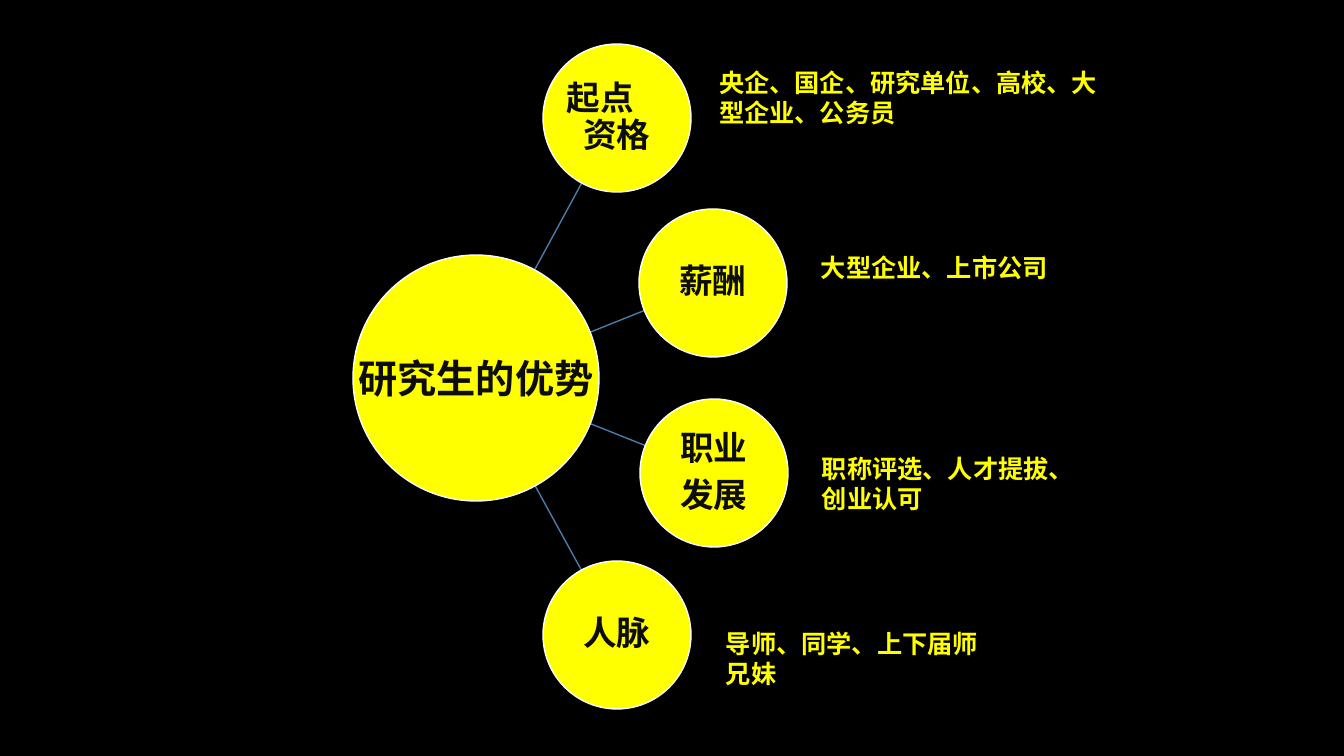
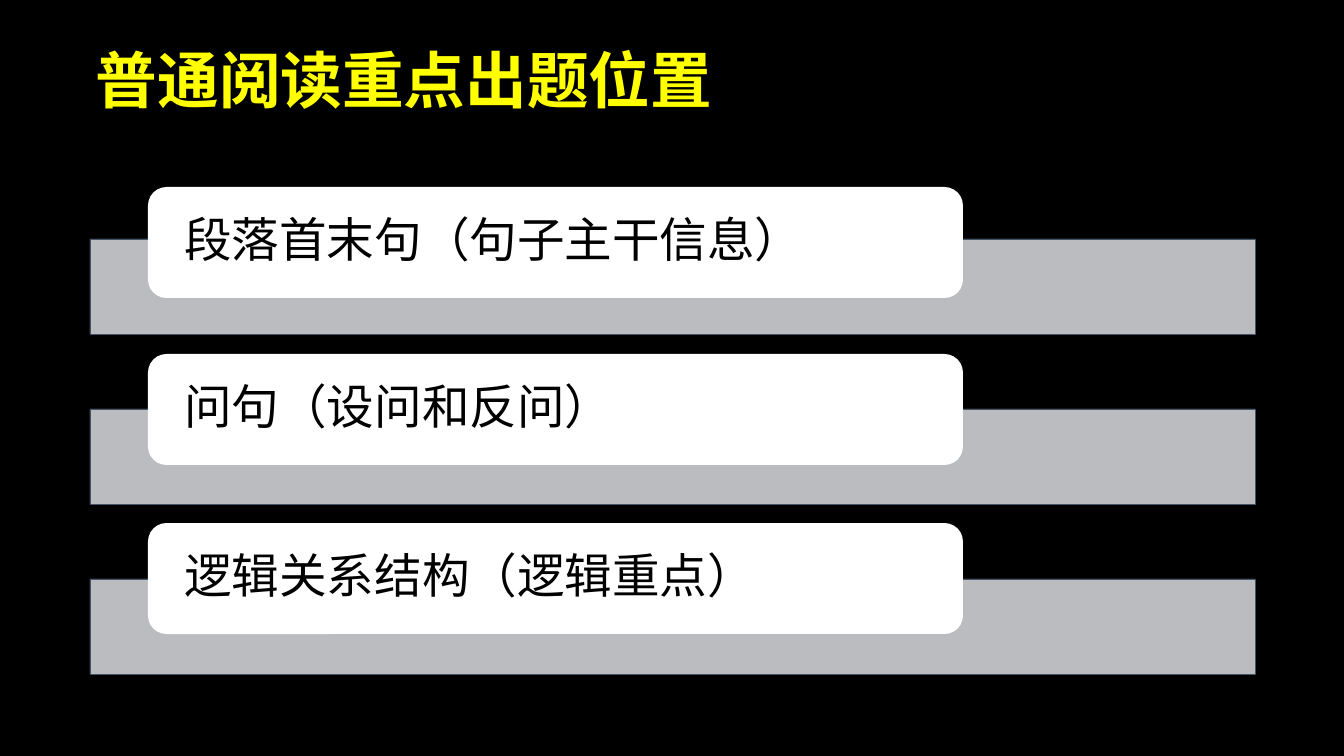
from math import hypot

from lxml.etree import SubElement
from pptx import Presentation
from pptx.dml.color import RGBColor
from pptx.enum.shapes import MSO_CONNECTOR, MSO_SHAPE
from pptx.enum.text import MSO_ANCHOR, MSO_AUTO_SIZE, PP_ALIGN
from pptx.oxml.ns import qn
from pptx.util import Emu, Pt

WIDTH, HEIGHT = 1344, 756
BLACK, INK, WHITE, YELLOW = "000000", "0D0D0D", "FFFFFF", "FFFF00"
SPOKE, BAR, BAR_EDGE = "497CAB", "CFD1D4", "44546A"
LATIN, CJK = "Calibri", "Noto Sans CJK SC"

HUB = ("研究生的优势", 476, 378, 123)  # text, centre x, centre y, radius
NODE_RADIUS = 74
# label lines, centre, note, note box (left, top, width, height)
NODES = [
    (["起点", "资格"], (617, 118), "央企、国企、研究单位、高校、大型企业、公务员", (709, 62, 400, 71)),
    (["薪酬"], (713, 283), "大型企业、上市公司", (811, 247, 340, 41)),
    (["职业", "发展"], (714, 473), "职称评选、人才提拔、创业认可", (812, 448, 295, 71)),
    (["人脉"], (617, 635), "导师、同学、上下届师兄妹", (716, 623, 291, 71)),
]

TITLE = "普通阅读重点出题位置"
BAR_TOP, BAR_PITCH = 239, 170
CARDS = [  # text, top
    ("段落首末句（句子主干信息）", 187),
    ("问句（设问和反问）", 354),
    ("逻辑关系结构（逻辑重点）", 523),
]


def px(n):
    return Emu(round(n * 12192000 / WIDTH))


def color(hex_string):
    return RGBColor.from_string(hex_string)


def write(shape, lines, size, hue, font, bold=False, align=PP_ALIGN.LEFT,
          anchor=MSO_ANCHOR.MIDDLE, insets=(10, 5), spacing=0.9, wrap=True):
    tf = shape.text_frame
    tf.text = "\n".join(lines)
    tf.word_wrap = wrap
    tf.auto_size = MSO_AUTO_SIZE.NONE
    tf.vertical_anchor = anchor
    tf.margin_left = tf.margin_right = px(insets[0])
    tf.margin_top = tf.margin_bottom = px(insets[1])
    for p in tf.paragraphs:
        p.alignment = align
        p.line_spacing = spacing
        for r in p.runs:
            r.font.name = font
            r.font.size = Pt(size)
            r.font.bold = bold
            r.font.color.rgb = color(hue)
            SubElement(r.font._element, qn("a:ea")).set("typeface", font)
    return tf


def add_shape(s, kind, box, fill, line=None, line_width=1):
    sp = s.shapes.add_shape(kind, *map(px, box))
    sp.shadow.inherit = False
    sp.fill.solid()
    sp.fill.fore_color.rgb = color(fill)
    if line:
        sp.line.color.rgb = color(line)
        sp.line.width = Pt(line_width)
    else:
        sp.line.fill.background()
    return sp


def add_circle(s, x, y, radius):
    box = (x - radius, y - radius, 2 * radius, 2 * radius)
    return add_shape(s, MSO_SHAPE.OVAL, box, YELLOW, WHITE)


def add_spoke(s, x, y):
    """Join the rim of the hub to the rim of the node centred at x, y."""
    _, hub_x, hub_y, hub_radius = HUB
    dx, dy = x - hub_x, y - hub_y
    length = hypot(dx, dy)
    start, end = hub_radius / length, 1 - NODE_RADIUS / length
    line = s.shapes.add_connector(
        MSO_CONNECTOR.STRAIGHT,
        px(hub_x + dx * start), px(hub_y + dy * start),
        px(hub_x + dx * end), px(hub_y + dy * end))
    line.line.color.rgb = color(SPOKE)
    line.line.width = Pt(1)
    SubElement(line._element.spPr, qn("a:effectLst"))


def build_advantages(prs):
    s = prs.slides.add_slide(prs.slide_layouts[6])
    for _, centre, _, _ in NODES:
        add_spoke(s, *centre)
    text, *hub = HUB
    write(add_circle(s, *hub), [text], 28, INK, LATIN, bold=True,
          align=PP_ALIGN.CENTER, spacing=1, wrap=False)
    for label, centre, note, box in NODES:
        tf = write(add_circle(s, *centre, NODE_RADIUS), label, 24, INK, LATIN,
                   bold=True, align=PP_ALIGN.CENTER, insets=(2, 2))
        first = tf.paragraphs[0]
        if label == NODES[0][0]:
            first.alignment = PP_ALIGN.LEFT  # staggered label
        elif len(label) > 1:
            first.space_after = Pt(8)
        write(s.shapes.add_textbox(*map(px, box)), [note], 18, YELLOW, LATIN,
              bold=True, anchor=MSO_ANCHOR.TOP, spacing=1)


def build_positions(prs):
    s = prs.slides.add_slide(prs.slide_layouts[5])
    title = s.shapes.title
    title.left, title.top, title.width, title.height = map(px, (86, 21, 1165, 126))
    write(title, [TITLE], 44, YELLOW, CJK, bold=True)
    for i, (text, top) in enumerate(CARDS):
        bar = add_shape(s, MSO_SHAPE.RECTANGLE,
                        (90, BAR_TOP + i * BAR_PITCH, 1165, 95), BAR, BAR_EDGE, 0.5)
        fill = bar._element.spPr.find(qn("a:solidFill"))
        SubElement(fill[0], qn("a:alpha")).set("val", "90000")
        card = add_shape(s, MSO_SHAPE.ROUNDED_RECTANGLE, (148, top, 815, 111), WHITE)
        write(card, [text], 34, BLACK, CJK, insets=(31, 0))


def main():
    prs = Presentation()
    prs.slide_width, prs.slide_height = px(WIDTH), px(HEIGHT)
    background = prs.slide_master.background.fill
    background.solid()
    background.fore_color.rgb = color(BLACK)
    build_advantages(prs)
    build_positions(prs)
    prs.save("out.pptx")


if __name__ == "__main__":
    main()
